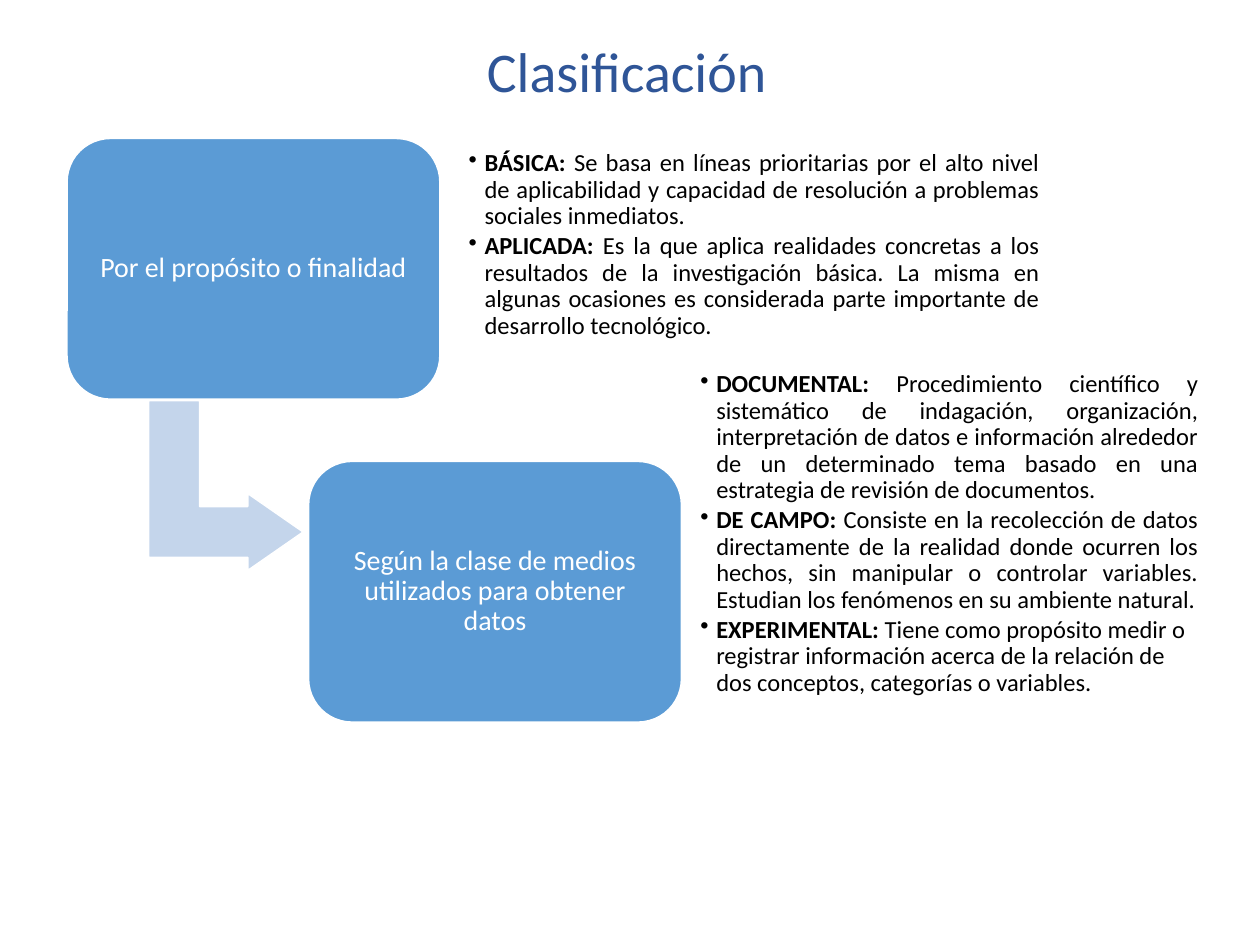
from dataclasses import dataclass

import pptx
import pptx.dml.color
import pptx.enum.shapes
import pptx.enum.text
import pptx.oxml
import pptx.oxml.ns
import pptx.util
from pptx.util import Cm

ALIGN = pptx.enum.text.PP_ALIGN
SHAPE = pptx.enum.shapes.MSO_SHAPE


@dataclass(frozen=True)
class Theme:
    """Colours, font and type sizes of the slide."""

    font: str = "Calibri"
    title: str = "2F5597"
    card: str = "5B9BD5"
    arrow: str = "C4D5EB"
    light: str = "FFFFFF"
    dark: str = "000000"
    title_size: int = 32
    card_size: int = 16
    body_size: int = 14


THEME = Theme()

PURPOSES = [
    ("BÁSICA: ", "Se basa en líneas prioritarias por el alto nivel de aplicabilidad y "
     "capacidad de resolución a problemas sociales inmediatos.", ALIGN.JUSTIFY),
    ("APLICADA: ", "Es la que aplica realidades concretas a los resultados de la "
     "investigación básica. La misma en algunas ocasiones es considerada parte "
     "importante de desarrollo tecnológico.", ALIGN.JUSTIFY),
]
MEANS = [
    ("DOCUMENTAL: ", "Procedimiento científico y sistemático de indagación, "
     "organización, interpretación de datos e información alrededor de un determinado "
     "tema basado en una estrategia de revisión de documentos.", ALIGN.JUSTIFY),
    ("DE CAMPO: ", "Consiste en la recolección de datos directamente de la realidad "
     "donde ocurren los hechos, sin manipular o controlar variables. Estudian los "
     "fenómenos en su ambiente natural.", ALIGN.JUSTIFY),
    ("EXPERIMENTAL: ", "Tiene como propósito medir o registrar información acerca de la "
     "relación de dos conceptos, categorías o variables.", ALIGN.LEFT),
]


def rgb(code):
    """Turn a hex code into a colour."""
    return pptx.dml.color.RGBColor.from_string(code)


def add_run(paragraph, text, size, color, bold=False):
    """Append one formatted run."""
    run = paragraph.add_run()
    run.text = text
    run.font.name = THEME.font
    run.font.size = pptx.util.Pt(size)
    run.font.bold = bold
    run.font.color.rgb = rgb(color)


def set_frame(frame, inset):
    """Centre the text vertically, wrap it and set equal insets."""
    frame.word_wrap = True
    frame.auto_size = pptx.enum.text.MSO_AUTO_SIZE.NONE
    frame.vertical_anchor = pptx.enum.text.MSO_ANCHOR.MIDDLE
    frame.margin_left = frame.margin_right = inset
    frame.margin_top = frame.margin_bottom = inset


def add_centred(frame, text, size, color):
    """Write one centred line of text into a frame."""
    paragraph = frame.paragraphs[0]
    paragraph.alignment = ALIGN.CENTER
    paragraph.line_spacing = 0.9
    add_run(paragraph, text, size, color)


def add_title(slide, text):
    """Place and fill the title placeholder."""
    title = slide.shapes.title
    title.left, title.top, title.width, title.height = Cm(1.69), Cm(0.56), Cm(21.89), Cm(1.88)
    set_frame(title.text_frame, Cm(0.25))
    add_centred(title.text_frame, text, THEME.title_size, THEME.title)


def add_filled(slide, kind, left, top, width, height, fill):
    """Add a flat preset shape with a thin white outline."""
    shape = slide.shapes.add_shape(kind, left, top, width, height)
    shape.shadow.inherit = False
    shape.fill.solid()
    shape.fill.fore_color.rgb = rgb(fill)
    shape.line.color.rgb = rgb(THEME.light)
    shape.line.width = pptx.util.Pt(1)
    return shape


def add_card(slide, left, top, text):
    """Add a rounded card naming one criterion."""
    card = add_filled(slide, SHAPE.ROUNDED_RECTANGLE, left, top, Cm(7.52), Cm(5.26), THEME.card)
    set_frame(card.text_frame, Cm(0.18))
    add_centred(card.text_frame, text, THEME.card_size, THEME.light)


def add_step_arrow(slide):
    """Add the bent arrow leading from the first card to the second."""
    arrow = add_filled(slide, SHAPE.BENT_UP_ARROW, Cm(2.84), Cm(8.23), Cm(3.43), Cm(3.12), THEME.arrow)
    arrow.rotation = 90
    for index, share in enumerate((0.33, 0.25, 0.36)):
        arrow.adjustments[index] = share


def add_bullet(paragraph):
    """Give a paragraph a bullet with a hanging indent."""
    properties = paragraph._p.get_or_add_pPr()
    properties.set("marL", str(Cm(0.32)))
    properties.set("indent", str(-Cm(0.32)))
    namespace = pptx.oxml.ns.nsdecls("a")
    properties.append(pptx.oxml.parse_xml(f'<a:buChar {namespace} char="•"/>'))


def add_definitions(slide, left, top, width, height, definitions):
    """Add a bulleted list of bold terms with their definitions."""
    frame = slide.shapes.add_textbox(left, top, width, height).text_frame
    set_frame(frame, Cm(0.15))
    for index, (term, meaning, alignment) in enumerate(definitions):
        paragraph = frame.add_paragraph() if index else frame.paragraphs[0]
        add_bullet(paragraph)
        paragraph.alignment = alignment
        paragraph.line_spacing = 0.9
        paragraph.space_after = pptx.util.Pt(2)
        add_run(paragraph, term, THEME.body_size, THEME.dark, bold=True)
        add_run(paragraph, meaning, THEME.body_size, THEME.dark)
    return frame


def main():
    """Build the classification slide."""
    deck = pptx.Presentation()
    deck.slide_width, deck.slide_height = Cm(25.4), Cm(19.05)
    slide = deck.slides.add_slide(deck.slide_layouts[5])
    add_title(slide, "Clasificación")
    add_step_arrow(slide)
    add_card(slide, Cm(1.35), Cm(2.79), "Por el propósito o finalidad")
    purposes = add_definitions(slide, Cm(9.3), Cm(3.18), Cm(11.81), Cm(4.27), PURPOSES)
    purposes.margin_bottom = Cm(0.9)
    add_card(slide, Cm(6.22), Cm(9.3), "Según la clase de medios utilizados para obtener datos")
    add_definitions(slide, Cm(13.97), Cm(7.21), Cm(10.34), Cm(7.11), MEANS)
    deck.save("out.pptx")


if __name__ == "__main__":
    main()
